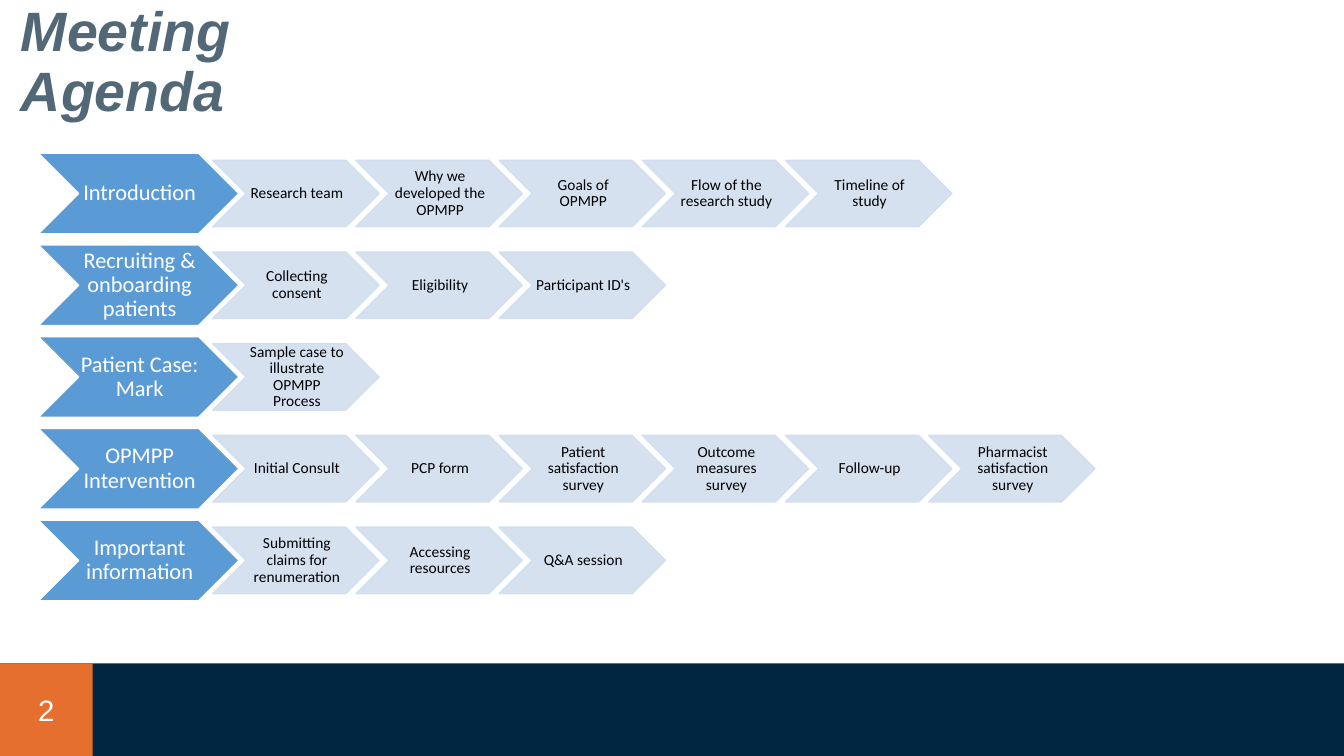
from lxml import etree
from pptx import Presentation
from pptx.dml.color import RGBColor
from pptx.enum.shapes import MSO_SHAPE
from pptx.enum.text import MSO_ANCHOR, PP_ALIGN
from pptx.oxml.ns import qn
from pptx.util import Inches, Pt

RECTANGLE, CHEVRON = MSO_SHAPE.RECTANGLE, MSO_SHAPE.CHEVRON
MIDDLE = MSO_ANCHOR.MIDDLE
LEFT, CENTER = PP_ALIGN.LEFT, PP_ALIGN.CENTER

WIDTH, HEIGHT = 13.33, 7.5
FOOTER = 0.92
TOPIC_LEFT, STEP_LEFT, COLUMN = 0.38, 2.11, 1.42
FIRST_CENTER, ROW = 1.92, 0.91
TOPIC_SIZE, STEP_SIZE = (1.99, 0.8), (1.65, 0.66)

COLORS = {
    "navy": "012641",
    "orange": "E56F2F",
    "slate": "536876",
    "blue": "5B9BD5",
    "pale": "D2DEEF",
    "white": "FFFFFF",
    "black": "000000",
}

AGENDA = [
    ("Introduction", ["Research team", "Why we developed the OPMPP", "Goals of OPMPP",
                      "Flow of the research study", "Timeline of study"]),
    ("Recruiting & onboarding patients", ["Collecting consent", "Eligibility", "Participant ID's"]),
    ("Patient Case: Mark", ["Sample case to illustrate OPMPP Process"]),
    ("OPMPP Intervention", ["Initial Consult", "PCP form", "Patient satisfaction survey",
                            "Outcome measures survey", "Follow-up",
                            "Pharmacist satisfaction survey"]),
    ("Important information", ["Submitting claims for renumeration", "Accessing resources",
                               "Q&A session"]),
]


class AgendaSlide:
    """Draws the agenda elements on one slide in a shared style."""

    def __init__(self, page):
        self.shapes = page.shapes

    def color(self, name):
        return RGBColor.from_string(COLORS[name])

    def label(self, box, text, size, color, font="Arial", align=CENTER, spacing=1.0):
        frame = box.text_frame
        frame.word_wrap = True
        frame.vertical_anchor = MIDDLE
        frame.text = text
        para = frame.paragraphs[0]
        para.alignment = align
        para.line_spacing = spacing
        para.font.size = Pt(size)
        para.font.name = font
        para.font.color.rgb = self.color(color)
        return para

    def shape(self, kind, left, top, width, height, fill):
        box = self.shapes.add_shape(kind, *map(Inches, (left, top, width, height)))
        box.shadow.inherit = False
        box.fill.solid()
        box.fill.fore_color.rgb = self.color(fill)
        box.line.fill.background()
        return box

    def title(self, text):
        box = self.shapes.add_textbox(*map(Inches, (0.11, 0.25, 2.48, 0.76)))
        para = self.label(box, text, 39.6, "slate", align=LEFT, spacing=0.9)
        para.font.bold = para.font.italic = True

    def footer(self, number):
        top = HEIGHT - FOOTER
        self.shape(RECTANGLE, 0, top, WIDTH, FOOTER, "navy")
        badge = self.shape(RECTANGLE, 0, top, FOOTER, FOOTER, "orange")
        self.label(badge, number, 21, "white")

    def chevron(self, text, left, row, dimensions, fill, line, size, color):
        width, height = dimensions
        top = FIRST_CENTER + row * ROW - height / 2
        box = self.shape(CHEVRON, left, top, width, height, fill)
        box.line.color.rgb = self.color(line)
        box.line.width = Pt(1)
        frame = box.text_frame
        frame.margin_left, frame.margin_right = Inches(0.02), 0
        frame.margin_top = frame.margin_bottom = Inches(0.01)
        self.label(box, text, size, color, font="Calibri", spacing=0.9)
        return box

    def topic(self, text, row):
        self.chevron(text, TOPIC_LEFT, row, TOPIC_SIZE, "blue", "white", 16, "white")

    def step(self, text, row, column):
        left = STEP_LEFT + column * COLUMN
        box = self.chevron(text, left, row, STEP_SIZE, "pale", "pale", 11, "black")
        for tint in box.element.spPr.iter(qn("a:srgbClr")):
            etree.SubElement(tint, qn("a:alpha"), val="90000")


def main():
    deck = Presentation()
    deck.slide_width, deck.slide_height = Inches(WIDTH), Inches(HEIGHT)
    agenda = AgendaSlide(deck.slides.add_slide(deck.slide_layouts[6]))
    agenda.footer("2")
    agenda.title("Meeting Agenda")
    for row, (topic, steps) in enumerate(AGENDA):
        agenda.topic(topic, row)
        for column, step in enumerate(steps):
            agenda.step(step, row, column)
    deck.save("out.pptx")


if __name__ == "__main__":
    main()
